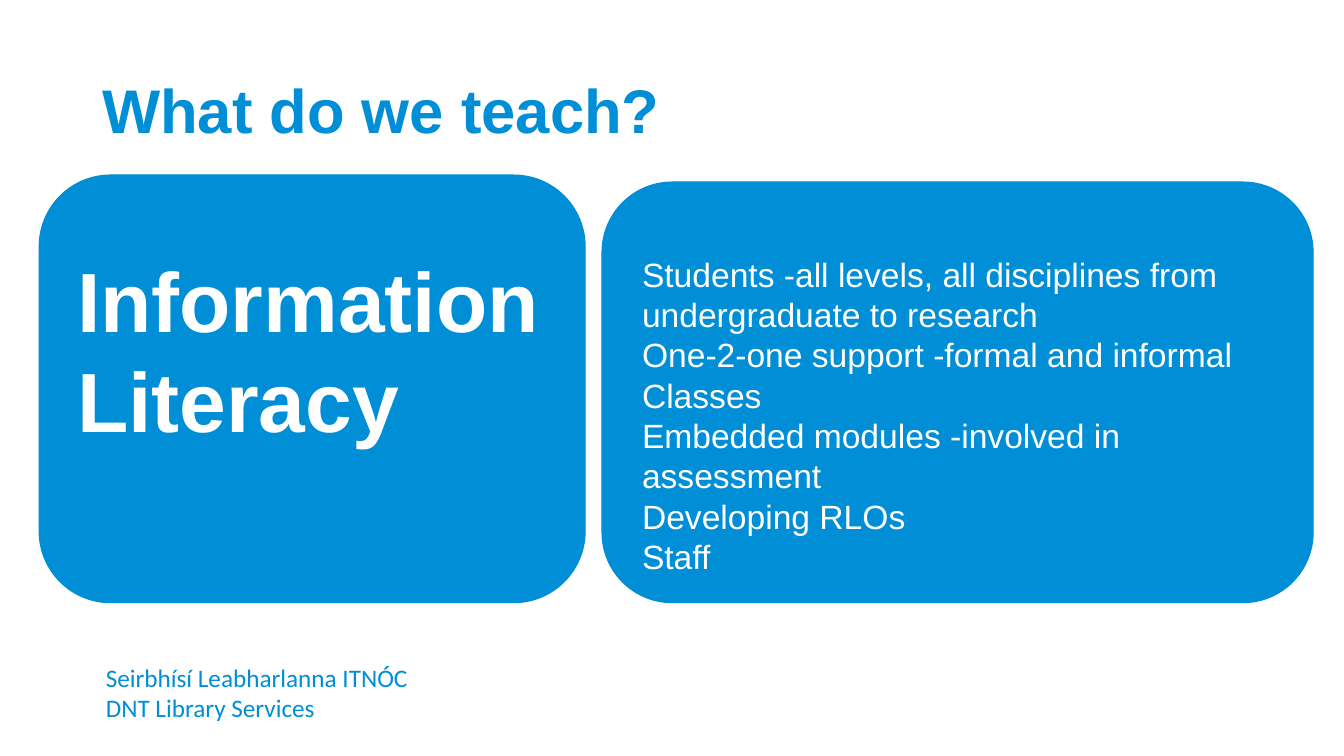
from pptx import Presentation
from pptx.dml.color import RGBColor
from pptx.enum.shapes import MSO_SHAPE
from pptx.enum.text import MSO_ANCHOR
from pptx.util import Pt

BLUE = RGBColor(0x00, 0x8E, 0xD6)
WHITE = RGBColor(0xFF, 0xFF, 0xFF)

TITLE_FONT = {"name": "Arial", "size": Pt(44), "bold": True}
TOPIC_FONT = {"name": "Arial", "size": Pt(60), "bold": True}
LIST_FONT = {"name": "Arial", "size": Pt(24), "bold": False}
FOOTER_FONT = {"name": "Calibri", "size": Pt(18), "bold": False}

TEACHING = [
    "Students -all levels, all disciplines from undergraduate to research",
    "One-2-one support -formal and informal",
    "Classes",
    "Embedded modules -involved in assessment",
    "Developing RLOs",
    "Staff",
]


def set_attributes(target, values):
    for name, value in values.items():
        setattr(target, name, value)


def add_text(slide, box, paragraphs, font, color, line_spacing=None,
             anchor=MSO_ANCHOR.TOP, margin=7.2):
    """Place a text box; margin is the top and bottom inset in points."""
    shape = slide.shapes.add_textbox(*map(Pt, box))
    frame = shape.text_frame
    set_attributes(frame, {
        "word_wrap": True, "vertical_anchor": anchor,
        "margin_left": Pt(7.2), "margin_right": Pt(7.2),
        "margin_top": Pt(margin), "margin_bottom": Pt(margin),
    })
    for index, text in enumerate(paragraphs):
        paragraph = frame.add_paragraph() if index else frame.paragraphs[0]
        paragraph.text = text
        paragraph.line_spacing = line_spacing
        set_attributes(paragraph.font, font)
        paragraph.font.color.rgb = color


def add_title(slide, box):
    add_text(slide, box, ["What do we teach?"], TITLE_FONT, BLUE,
             line_spacing=0.9, anchor=MSO_ANCHOR.MIDDLE)


def add_panel(slide, box, paragraphs, font, text_inset):
    """Draw a rounded panel with text inset by (left, top, right, bottom)."""
    shape = slide.shapes.add_shape(MSO_SHAPE.ROUNDED_RECTANGLE, *map(Pt, box))
    shape.shadow.inherit = False
    shape.adjustments[0] = 0.167
    shape.fill.solid()
    shape.fill.fore_color.rgb = BLUE
    shape.line.color.rgb = BLUE
    shape.line.width = Pt(0.75)

    left, top, width, height = box
    inset_left, inset_top, inset_right, inset_bottom = text_inset
    text_box = (left + inset_left, top + inset_top,
                width - inset_left - inset_right,
                height - inset_top - inset_bottom)
    add_text(slide, text_box, paragraphs, font, WHITE,
             line_spacing=Pt(1.2 * font["size"].pt))


def add_footer(slide, box):
    add_text(slide, box, ["Seirbhísí Leabharlanna ITNÓC\nDNT Library Services"],
             FOOTER_FONT, BLUE, margin=3.6)


def main():
    presentation = Presentation()
    presentation.slide_width = Pt(960)
    presentation.slide_height = Pt(540)
    slide = presentation.slides.add_slide(presentation.slide_layouts[6])

    add_title(slide, (66, 29, 828, 104))
    add_panel(slide, (28, 125, 390, 305.5), ["Information Literacy"],
              TOPIC_FONT, (20, 45, 0, 44))
    add_panel(slide, (430, 130, 508, 300.5), TEACHING,
              LIST_FONT, (21.5, 44, 8.5, 56))
    add_footer(slide, (68.5, 469.5, 329, 51))

    presentation.save("out.pptx")


if __name__ == "__main__":
    main()
